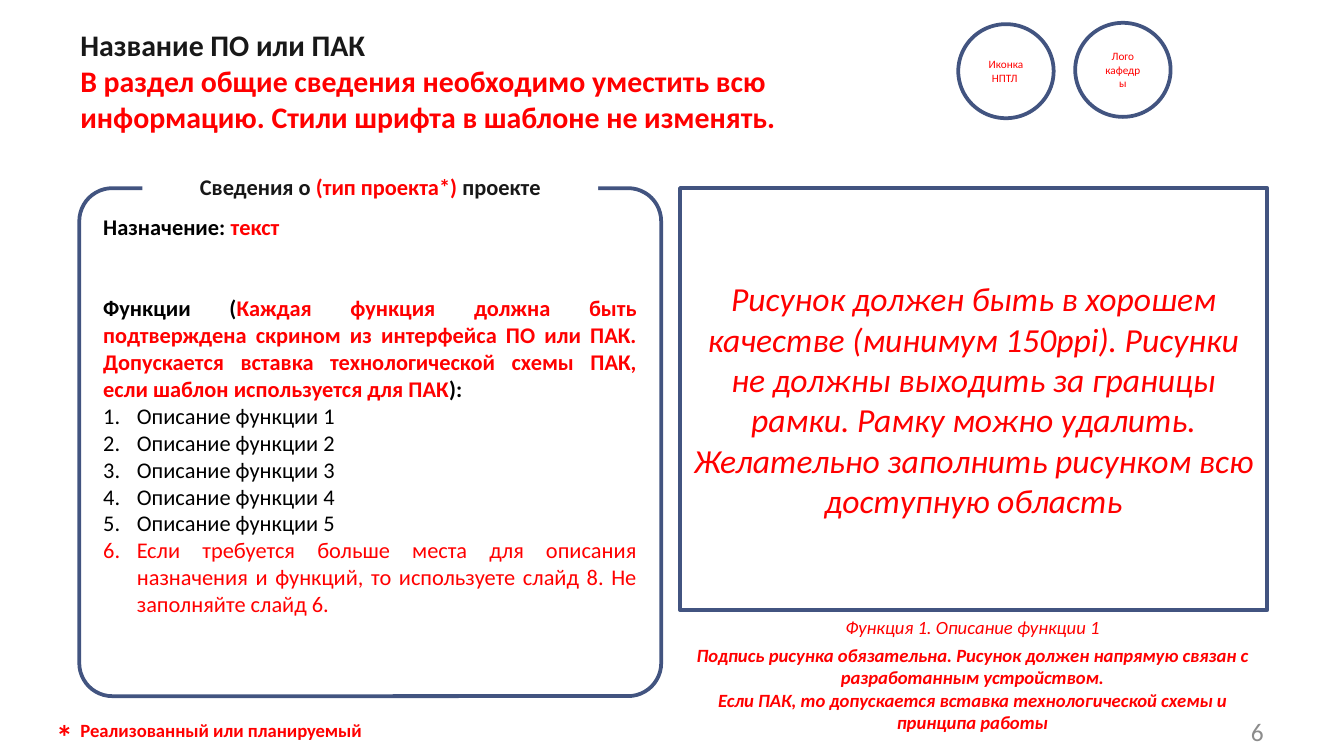
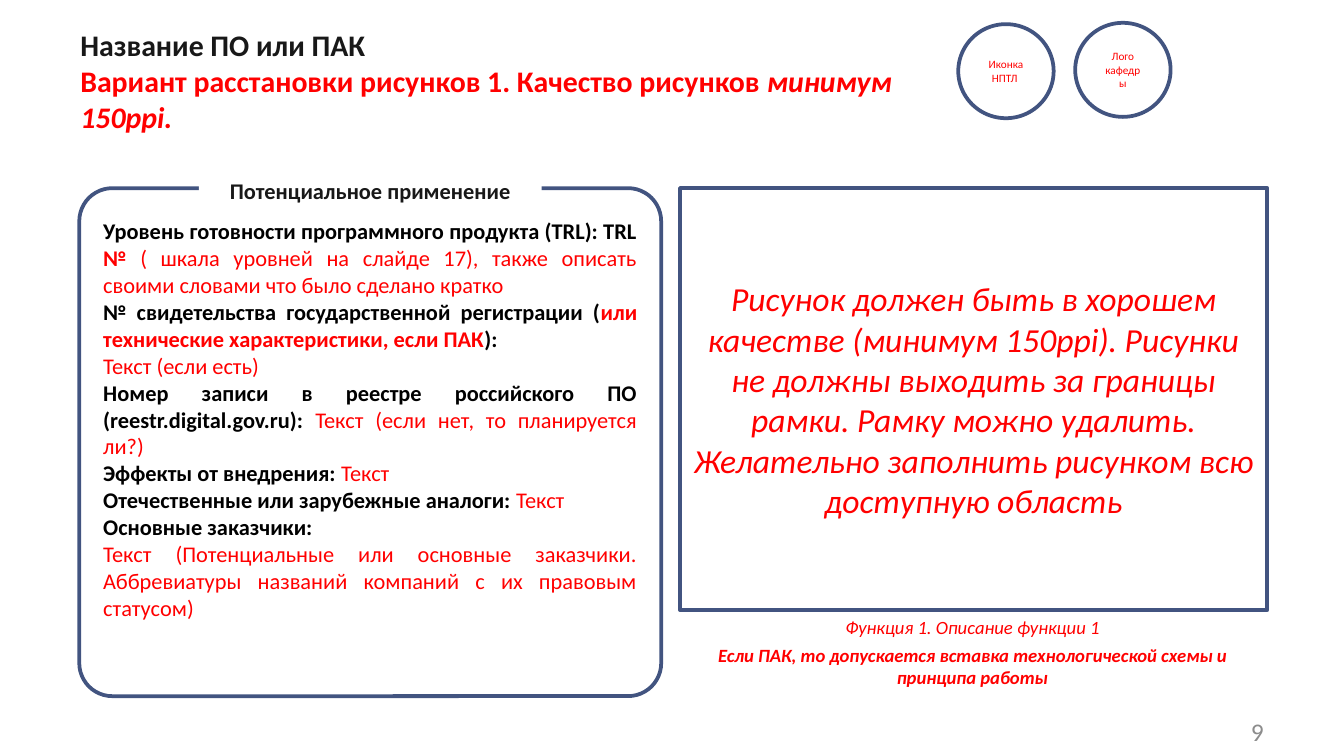
from copy import deepcopy

from lxml import etree
from pptx import Presentation
from pptx.dml.color import RGBColor
from pptx.enum.shapes import MSO_SHAPE as SHAPE
from pptx.enum.text import MSO_ANCHOR as ANCHOR, PP_ALIGN as ALIGN
from pptx.oxml.ns import qn
from pptx.util import Emu, Pt

PX = 9144  # 100 px to the inch
FONT = "Calibri"
BLUE, RED, WHITE = "425480", "FF0000", "FFFFFF"
BLACK, DARK, GREY = "000000", "181818", "8C8C8C"


def add_box(slide, box, kind=None, line=None):
    """Add a text box, or a white preset shape when a kind is given."""
    place = [Emu(value * PX) for value in box]
    if kind is None:
        return slide.shapes.add_textbox(*place)
    shape = slide.shapes.add_shape(kind, *place)
    shape.shadow.inherit = False
    shape.fill.solid()
    shape.fill.fore_color.rgb = RGBColor.from_string(WHITE)
    if line:
        shape.line.color.rgb = RGBColor.from_string(line)
        shape.line.width = Pt(2)
    else:
        shape.line.fill.background()
    return shape


def write(shape, paragraphs, size, align=ALIGN.LEFT, anchor=ANCHOR.TOP, wrap=True):
    """Fill a shape with paragraphs, each a list of (text, colour, style) runs."""
    frame = shape.text_frame
    frame.word_wrap = wrap
    frame.vertical_anchor = anchor
    for index, runs in enumerate(paragraphs):
        paragraph = frame.add_paragraph() if index else frame.paragraphs[0]
        paragraph.alignment = align
        for text, colour, style in runs:
            run = paragraph.add_run()
            run.text = text.rstrip("\n")
            run.font.name = FONT
            run.font.size = Pt(size)
            run.font.bold = "b" in style
            run.font.italic = "i" in style
            run.font.color.rgb = RGBColor.from_string(colour)
            if text.endswith("\n"):
                # The break takes the format of its run
                paragraph.add_line_break()
                paragraph._p[-1].append(deepcopy(run._r.rPr))
    return frame.paragraphs


FRAME_TEXT = (
    "Рисунок должен быть в хорошем качестве (минимум 150ppi). Рисунки не должны "
    "выходить за границы рамки. Рамку можно удалить. Желательно заполнить рисунком "
    "всю доступную область"
)
SCHEME_NOTE = "Если ПАК, то допускается вставка технологической схемы и принципа работы"
BADGES = [
    ((800, 17, 71, 70), ["Лого", "кафедры"]),
    ((713, 18, 71, 70), ["Иконка НПТЛ "]),
]

general_info = {
    "number": "6",
    "title_box": (50, 15, 647, 114),
    "title": [("В раздел общие сведения необходимо уместить всю информацию. "
               "Стили шрифта в шаблоне не изменять.", RED, "b")],
    "heading_box": (106, 124, 339, 30),
    "heading": [("Сведения о ", DARK, "b"), ("(тип проекта*)", RED, "b"),
                (" проекте", DARK, "b")],
    "body_box": (67, 154, 417, 353),
    "body": [
        [("Назначение: ", BLACK, "b"), ("текст", RED, "b")],
        [("Функции (", BLACK, "b"),
         ("Каждая функция должна быть подтверждена скрином из интерфейса ПО или ПАК. "
          "Допускается вставка технологической схемы ПАК, если шаблон используется "
          "для ПАК", RED, "b"),
         ("): ", BLACK, "b")],
        *[[(f"Описание функции {number}", BLACK, "")] for number in range(1, 6)],
        [("Если требуется больше места для описания назначения и функций, то "
          "используете слайд 8. Не заполняйте слайд 6.", RED, "")],
    ],
    "caption_box": (506, 453, 435, 98),
    "caption": ["Подпись рисунка обязательна. Рисунок должен напрямую связан с "
                "разработанным устройством.", SCHEME_NOTE],
}

application = {
    "number": "9",
    "title_box": (50, 15, 647, 70),
    "title": [("Вариант расстановки рисунков 1. Качество рисунков ", RED, "b"),
              ("минимум 150ppi.", RED, "bi")],
    "heading_box": (148, 127, 255, 30),
    "heading": [("Потенциальное применение", DARK, "b")],
    "body_box": (67, 157, 417, 333),
    "body": [
        [("Уровень готовности программного продукта (TRL): TRL ", BLACK, "b"),
         ("№ ", RED, "b"),
         ("( шкала уровней на слайде 17), также описать своими словами что было "
          "сделано кратко", RED, "")],
        [("№ свидетельства государственной регистрации (", BLACK, "b"),
         ("или технические характеристики, если ПАК", RED, "b"), ("):", BLACK, "b")],
        [("Текст (если есть)", RED, "")],
        [("Номер записи в реестре российского ПО (reestr.digital.gov.ru): ", BLACK, "b"),
         ("Текст (если нет, то планируется ли?)", RED, "")],
        [("Эффекты от внедрения: ", BLACK, "b"), ("Текст", RED, "")],
        [("Отечественные или зарубежные аналоги: ", BLACK, "b"), ("Текст", RED, "")],
        [("Основные заказчики:", BLACK, "b")],
        [("Текст (Потенциальные или основные заказчики. Аббревиатуры названий "
          "компаний с их правовым статусом)", RED, "")],
    ],
    "caption_box": (506, 453, 435, 82),
    "caption": [SCHEME_NOTE],
}

# Wide slides, 16:9
presentation = Presentation()
presentation.slide_width = Emu(1000 * PX)
presentation.slide_height = Emu(1000 * PX * 9 // 16)

for content in (general_info, application):
    slide = presentation.slides.add_slide(presentation.slide_layouts[6])

    # Rounded panel, title and slide number
    panel = add_box(slide, (59, 140, 433, 378), SHAPE.ROUNDED_RECTANGLE, BLUE)
    panel.adjustments[0] = 0.065
    title = [("Название ПО или ПАК\n", DARK, "b"), *content["title"]]
    write(add_box(slide, content["title_box"]), [title], 16)
    write(add_box(slide, (894, 529, 56, 30)), [[(content["number"], GREY, "")]],
          13.6, ALIGN.RIGHT, ANCHOR.MIDDLE)

    # Panel heading and text
    write(add_box(slide, content["heading_box"], SHAPE.RECTANGLE),
          [content["heading"]], 12, ALIGN.CENTER)
    body = write(add_box(slide, content["body_box"]), content["body"], 12, ALIGN.JUSTIFY)

    # Figure frame and caption
    frame = add_box(slide, (506, 140, 437, 314), SHAPE.RECTANGLE, BLUE)
    frame.text_frame.margin_left = frame.text_frame.margin_right = Emu(8 * PX)
    write(frame, [[(FRAME_TEXT, RED, "i")]], 18, ALIGN.CENTER, ANCHOR.MIDDLE)
    caption = [[("Функция 1. Описание функции 1", RED, "i")]]
    caption += [[(note, RED, "bi")] for note in content["caption"]]
    lines = write(add_box(slide, content["caption_box"]), caption, 10, ALIGN.CENTER)
    lines[0].space_after = Pt(3)

    # Round badges
    for box, words in BADGES:
        write(add_box(slide, box, SHAPE.OVAL, BLUE), [[(word, RED, "")] for word in words],
              6, ALIGN.CENTER, ANCHOR.MIDDLE)

    if content is general_info:
        # Gap above the functions and their numbering
        body[1].space_before = Pt(29)
        for paragraph in body[2:]:
            properties = paragraph._p.get_or_add_pPr()
            properties.set("marL", str(25 * PX))
            properties.set("indent", str(-25 * PX))
            etree.SubElement(properties, qn("a:buAutoNum"), type="arabicPeriod")

        # Footnote
        write(add_box(slide, (32, 528, 32, 40)), [[("*", RED, "b")]], 18, wrap=False)
        write(add_box(slide, (50, 530, 255, 27)),
              [[("Реализованный или планируемый", RED, "b")]], 10, wrap=False)

presentation.save("out.pptx")
